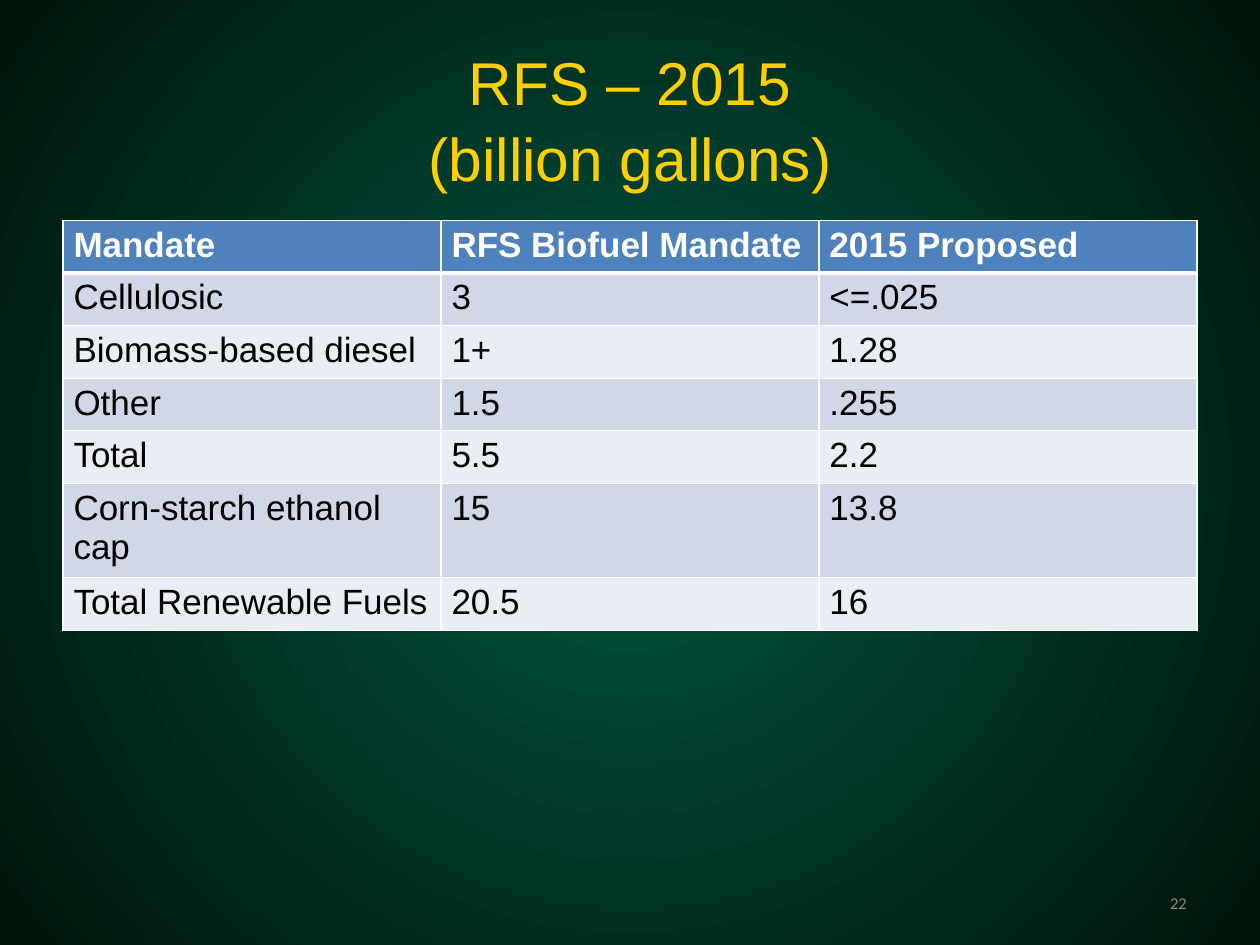
from lxml import etree
from pptx import Presentation
from pptx.dml.color import RGBColor
from pptx.enum.text import MSO_ANCHOR, PP_ALIGN
from pptx.oxml.ns import qn
from pptx.util import Inches, Pt

CENTER, RIGHT = PP_ALIGN.CENTER, PP_ALIGN.RIGHT
MIDDLE = MSO_ANCHOR.MIDDLE
WIDTH, HEIGHT = Inches(12), Inches(9)
MARGIN, CONTENT = 0.05, 0.9
ROW, TALL_ROW = Inches(0.47), Inches(0.84)
WHITE, BLACK = "FFFFFF", "000000"
HEADER, BANDS = "4F81BD", ("E9EDF4", "D0D8E8")
MANDATES = [
    ("Mandate", "RFS Biofuel Mandate", "2015 Proposed"),
    ("Cellulosic", "3", "<=.025"),
    ("Biomass-based diesel", "1+", "1.28"),
    ("Other", "1.5", ".255"),
    ("Total", "5.5", "2.2"),
    ("Corn-starch ethanol cap", "15", "13.8"),
    ("Total Renewable Fuels", "20.5", "16"),
]


def color(value):
    return RGBColor.from_string(value)


def style(para, size, name, value, bold=False):
    for span in para.runs:
        span.font.size = Pt(size)
        span.font.name = name
        span.font.bold = bold
        span.font.color.rgb = color(value)


def paint_background(page):
    fill = page.background.fill
    fill.gradient()
    for stop, position, value in zip(fill.gradient_stops, (0.02, 1), ("005643", "001409")):
        stop.position = position
        stop.color.rgb = color(value)
    gradient = page.background._cSld.find(".//" + qn("a:gradFill"))
    gradient.remove(gradient.find(qn("a:lin")))
    path = etree.SubElement(gradient, qn("a:path"), path="circle")
    center = dict.fromkeys("ltrb", "50000")
    etree.SubElement(path, qn("a:fillToRect"), center)


def add_text(page, text, left, top, width, height, align, size, name, value, spacing=1.0):
    box = page.shapes.add_textbox(
        int(WIDTH * left), int(HEIGHT * top), int(WIDTH * width), int(HEIGHT * height))
    frame = box.text_frame
    frame.word_wrap = True
    frame.vertical_anchor = MIDDLE
    frame.text = text
    para = frame.paragraphs[0]
    para.alignment = align
    para.line_spacing = spacing
    style(para, size, name, value)


def add_borders(cell, bottom):
    properties = cell._tc.get_or_add_tcPr()
    for side, width in (("L", 1), ("R", 1), ("T", 1), ("B", bottom)):
        line = etree.SubElement(properties, qn(f"a:ln{side}"), w=str(Pt(width)))
        fill = etree.SubElement(line, qn("a:solidFill"))
        etree.SubElement(fill, qn("a:srgbClr"), val=WHITE)


def fill_cell(cell, text, row):
    header = row == 0
    add_borders(cell, 3 if header else 1)
    cell.fill.solid()
    cell.fill.fore_color.rgb = color(HEADER if header else BANDS[row % 2])
    cell.text = text
    style(cell.text_frame.paragraphs[0], 24, "Arial", WHITE if header else BLACK, header)


def add_mandate_table(page):
    heights = [TALL_ROW if "cap" in name else ROW for name, *_ in MANDATES]
    table = page.shapes.add_table(
        len(MANDATES), len(MANDATES[0]), int(WIDTH * MARGIN), Inches(2.1),
        int(WIDTH * CONTENT), sum(heights)).table
    for row, values in enumerate(MANDATES):
        table.rows[row].height = heights[row]
        for column, text in enumerate(values):
            fill_cell(table.cell(row, column), text, row)


def main():
    deck = Presentation()
    deck.slide_width, deck.slide_height = WIDTH, HEIGHT
    page = deck.slides.add_slide(deck.slide_layouts[6])
    paint_background(page)
    add_text(page, "RFS – 2015\v(billion gallons)", MARGIN, 0.04, CONTENT, 0.17,
             CENTER, 41.4, "Arial", "FFCF01", 1.04)
    add_mandate_table(page)
    add_text(page, "22", 0.72, 0.93, 0.23, 0.05, RIGHT, 11.3, "Calibri", "898989")
    deck.save("out.pptx")


if __name__ == "__main__":
    main()
